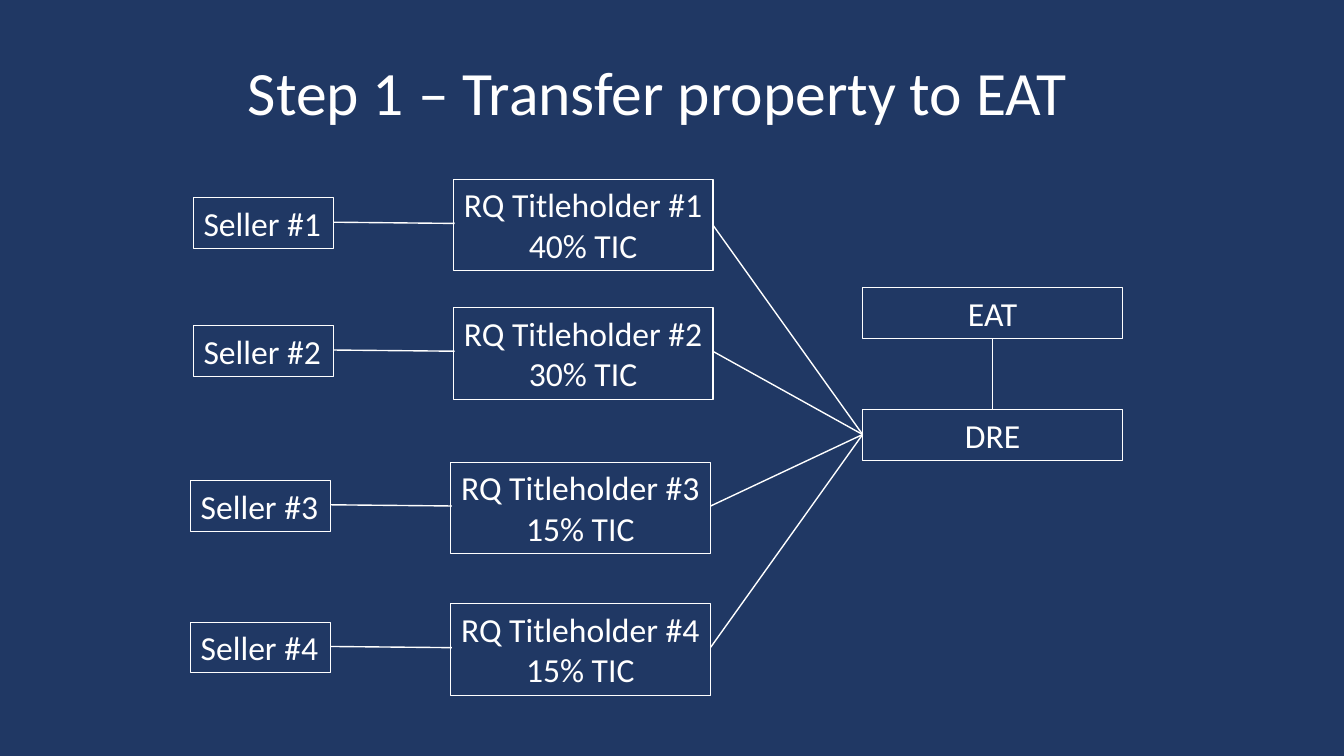
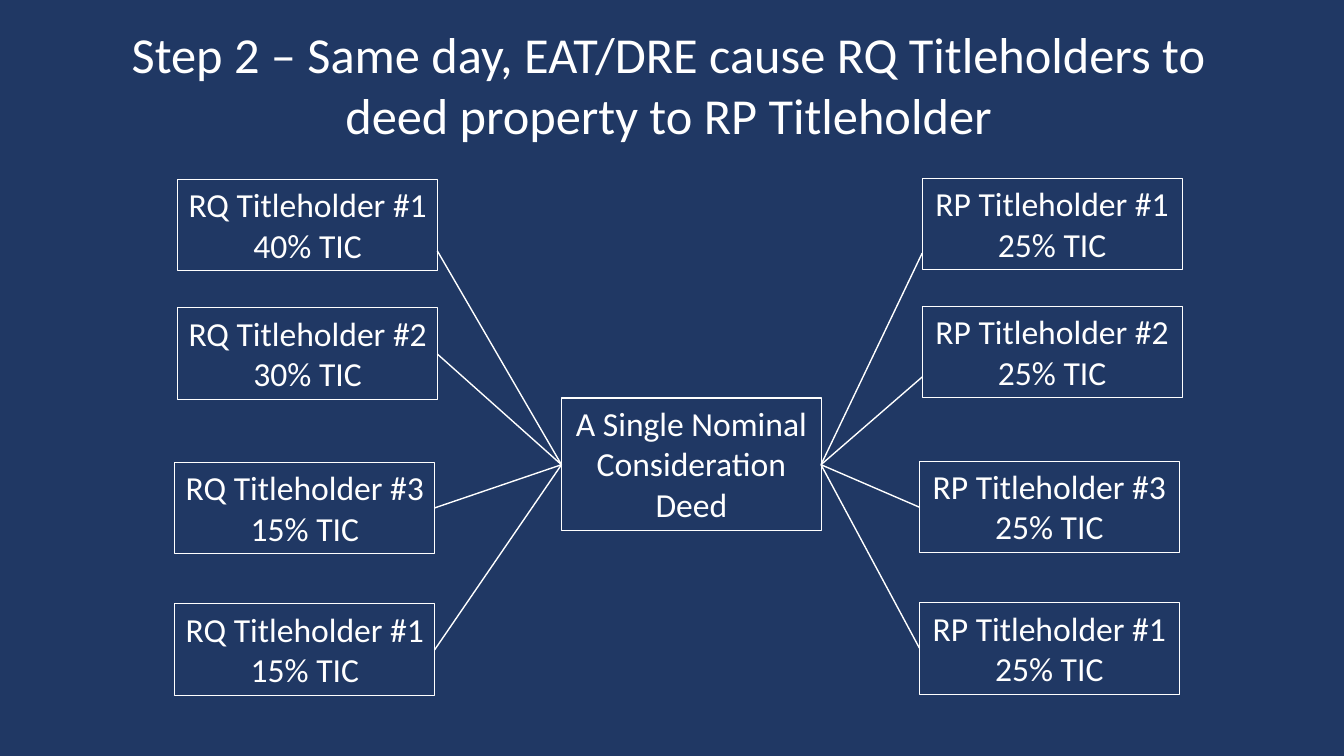
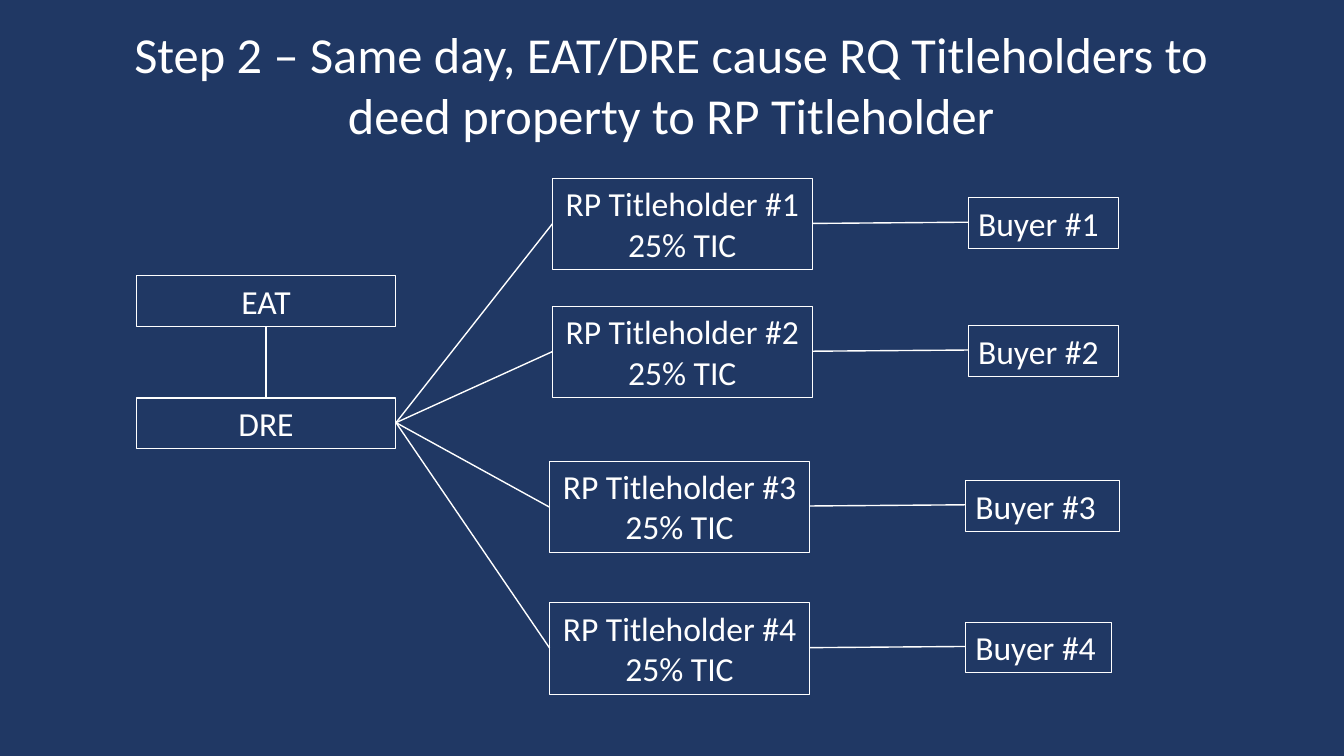
from pptx import Presentation
from pptx.dml.color import RGBColor
from pptx.enum.shapes import MSO_CONNECTOR, MSO_SHAPE
from pptx.enum.text import MSO_ANCHOR, MSO_AUTO_SIZE, PP_ALIGN
from pptx.oxml.ns import qn
from pptx.util import Cm, Pt
from lxml.etree import SubElement

COLORS = {"background": "203864", "foreground": "FFFFFF"}
WHITE = RGBColor.from_string(COLORS["foreground"])
BOX_WIDTH, BOX_HEIGHT = 6.55, 2.31
SELLER_WIDTH, SMALL_HEIGHT = 3.52, 1.28
SHIFTS = [0, 0, 0.07, 0.07]
RQ_TOPS = [4.52, 7.75, 11.65, 15.22]
RP_TOPS = [top - 0.03 for top in RQ_TOPS]
PARTY_TOPS = [top + 0.46 for top in RQ_TOPS]


def write_text(shape, text, size, align, anchor=MSO_ANCHOR.TOP):
    frame = shape.text_frame
    frame_format = {
        "text": text,
        "word_wrap": True,
        "auto_size": MSO_AUTO_SIZE.SHAPE_TO_FIT_TEXT,
        "vertical_anchor": anchor,
    }
    for name, value in frame_format.items():
        setattr(frame, name, value)
    paragraph = frame.paragraphs[0]
    paragraph.alignment = align
    font = paragraph.runs[0].font
    for name, value in {"name": "Calibri", "size": Pt(size)}.items():
        setattr(font, name, value)
    font.color.rgb = WHITE


def add_box(page, text, left, top, width, height, align=PP_ALIGN.CENTER, anchor=MSO_ANCHOR.TOP):
    box = page.shapes.add_shape(MSO_SHAPE.RECTANGLE, Cm(left), Cm(top), Cm(width), Cm(height))
    box.shadow.inherit = False
    box.fill.background()
    box.line.color.rgb = WHITE
    box.line.width = Pt(0.75)
    write_text(box, text, 24, align, anchor)


deck = Presentation()
deck.slide_width, deck.slide_height = Cm(33.87), Cm(19.05)
background = deck.slide_master.background.fill
background.solid()
background.fore_color.rgb = RGBColor.from_string(COLORS["background"])

step_two = "Step 2 – Same day, EAT/DRE cause RQ Titleholders to deed property to RP Titleholder"
titles = [
    ("Step 1 – Transfer property to EAT", 44, 4.88, 1.24, 23.39, 2.13),
    (step_two, 36, 2.29, 0.46, 29.13, 3.33),
    (step_two, 36, 2.62, 0.46, 28.6, 3.33),
]
pages = []
for text, size, left, top, width, height in titles:
    page = deck.slides.add_slide(deck.slide_layouts[5])
    title = page.shapes.title
    title.left, title.top, title.width, title.height = Cm(left), Cm(top), Cm(width), Cm(height)
    write_text(title, text, size, PP_ALIGN.CENTER)
    pages.append(page)
transfer, deed, purchase = pages

sellers = [f"Seller #{number}" for number in range(1, 5)]
buyers = [f"Buyer #{number}" for number in range(1, 5)]
shares = [40, 30, 15, 15]
rq_holders = [f"RQ Titleholder #{number} {share}% TIC" for number, share in enumerate(shares, 1)]
rp_holders = [f"RP Titleholder #{number} 25% TIC" for number in range(1, 5)]
deed_rq = rq_holders[:3] + ["RQ Titleholder #1 15% TIC"]
deed_rp = rp_holders[:3] + rp_holders[:1]

holder_widths = [BOX_WIDTH] * 4
columns = [
    (transfer, sellers, 4.88, PARTY_TOPS, [SELLER_WIDTH] * 4, SMALL_HEIGHT, PP_ALIGN.LEFT),
    (transfer, rq_holders, 11.42, RQ_TOPS, holder_widths, BOX_HEIGHT, PP_ALIGN.CENTER),
    (deed, deed_rq, 4.48, RQ_TOPS, holder_widths, BOX_HEIGHT, PP_ALIGN.CENTER),
    (deed, deed_rp, 23.24, RP_TOPS, holder_widths, BOX_HEIGHT, PP_ALIGN.CENTER),
    (purchase, rp_holders, 13.92, RP_TOPS, holder_widths, BOX_HEIGHT, PP_ALIGN.CENTER),
    (purchase, buyers, 24.4, PARTY_TOPS, [3.78, 3.78, 3.89, 3.68], SMALL_HEIGHT, PP_ALIGN.LEFT),
]
for page, texts, left, tops, widths, height, align in columns:
    for text, shift, top, width in zip(texts, SHIFTS, tops, widths):
        add_box(page, text, left - shift, top, width, height, align)

lines = []
for page, left, top in [(transfer, 21.74, 7.24), (purchase, 3.43, 6.95)]:
    dre_top = top + 3.08
    for text, box_top in [("EAT", top), ("DRE", dre_top)]:
        add_box(page, text, left, box_top, BOX_WIDTH, SMALL_HEIGHT, anchor=MSO_ANCHOR.MIDDLE)
    center = left + BOX_WIDTH / 2
    lines.append((page, center, top + SMALL_HEIGHT, center, dre_top))
add_box(deed, "A Single Nominal Consideration Deed", 14.15, 10.03, BOX_WIDTH, 3.33)

fans = [
    (transfer, 21.74, 10.95, 17.98, [5.69, 8.86, 12.75, 16.31]),
    (deed, 14.15, 11.71, 11.02, [6.32, 8.92, 12.8, 16.38]),
    (deed, 20.69, 11.71, 23.24, [6.38, 9.5, 12.78, 16.33]),
    (purchase, 9.98, 10.65, 13.92, [5.64, 8.86, 12.78, 16.33]),
]
for page, hub_left, hub_top, edge, heights in fans:
    for shift, height in zip(SHIFTS, heights):
        lines.append((page, edge - shift, height, hub_left, hub_top))

for shift, height in zip(SHIFTS, [5.6, 8.82, 12.72, 16.29]):
    lines.append((transfer, 8.41 - shift, height, 11.46 - shift, height + 0.03))
    lines.append((purchase, 20.47 - shift, height + 0.03, 24.4 - shift, height))

for page, *ends in lines:
    line = page.shapes.add_connector(MSO_CONNECTOR.STRAIGHT, *[Cm(end) for end in ends])
    line.line.color.rgb = WHITE
    line.line.width = Pt(1)
    SubElement(line._element.spPr, qn("a:effectLst"))

deck.save("out.pptx")
